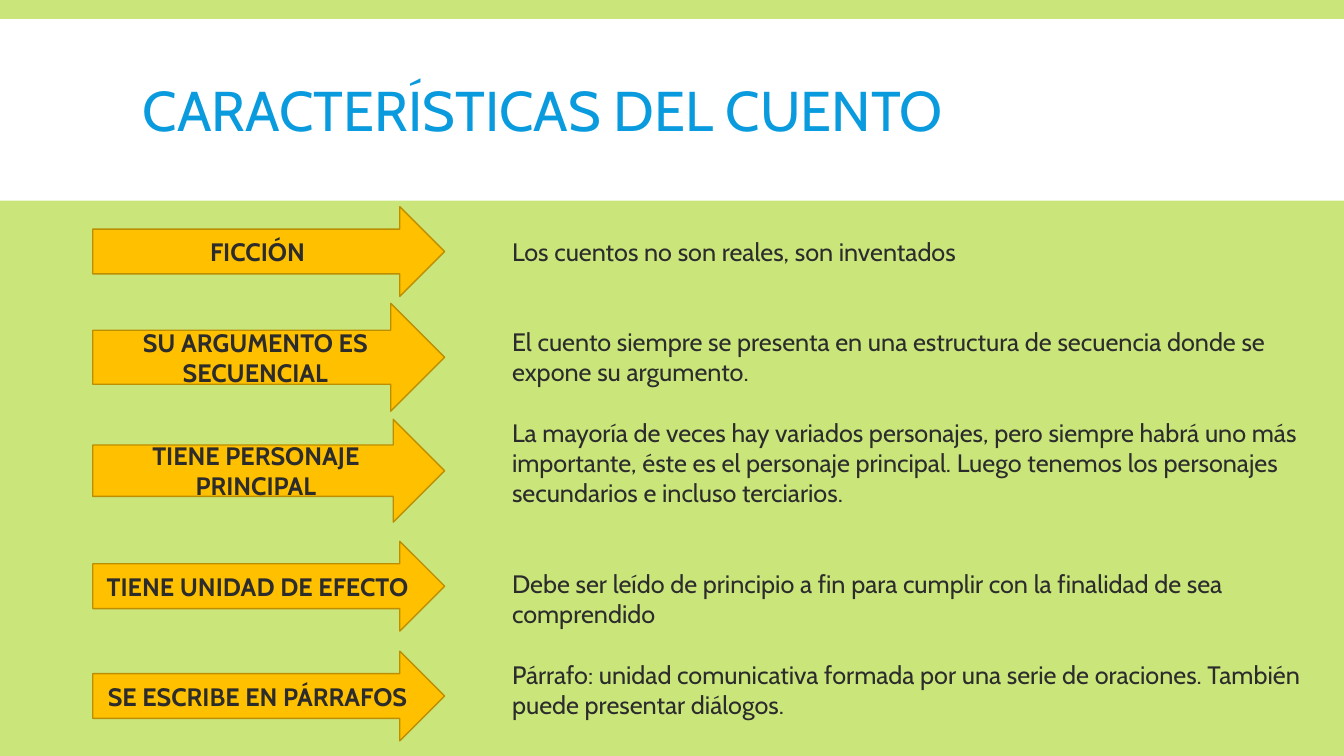
from pptx import Presentation
from pptx.dml.color import RGBColor
from pptx.enum.shapes import MSO_SHAPE
from pptx.enum.text import MSO_ANCHOR, PP_ALIGN
from pptx.util import Inches, Pt

RECTANGLE = MSO_SHAPE.RECTANGLE
RIGHT_ARROW = MSO_SHAPE.RIGHT_ARROW
MIDDLE = MSO_ANCHOR.MIDDLE
TOP = MSO_ANCHOR.TOP
LEFT = PP_ALIGN.LEFT
CENTER = PP_ALIGN.CENTER

FONT = "Cabin"
GREEN = "CAE67B"
WHITE = "FFFFFF"
BLUE = "099BDD"
AMBER = "FFC000"
DARK_AMBER = "BD8E00"
INK = "2C2C2C"
LINE_PITCH = 21.6

TRAITS = [
    ("FICCIÓN", 2.05, 0.89, 0,
     "Los cuentos no son reales, son inventados"),
    ("SU ARGUMENTO ES SECUENCIAL", 3.01, 1.07, 2,
     "El cuento siempre se presenta en una estructura de secuencia donde se "
     "expone su argumento."),
    ("TIENE PERSONAJE PRINCIPAL", 4.16, 1.02, 1,
     "La mayoría de veces hay variados personajes, pero siempre habrá uno más "
     "importante, éste es el personaje principal. Luego tenemos los personajes "
     "secundarios e incluso terciarios."),
    ("TIENE UNIDAD DE EFECTO", 5.37, 0.89, 2,
     "Debe ser leído de principio a fin para cumplir con la finalidad de sea "
     "comprendido"),
    ("SE ESCRIBE EN PÁRRAFOS", 6.46, 0.89, 1,
     "Párrafo: unidad comunicativa formada por una serie de oraciones. También "
     "puede presentar diálogos."),
]


def color(value):
    return RGBColor.from_string(value)


def write(para, text, size=18, fill=INK, bold=False, align=LEFT,
          space_before=0, line_spacing=1.0):
    para.alignment = align
    para.space_before = Pt(space_before)
    para.line_spacing = line_spacing
    span = para.add_run()
    span.text = text
    span.font.name = FONT
    span.font.size = Pt(size)
    span.font.bold = bold
    span.font.color.rgb = color(fill)


def add_panel(page, kind, left, top, width, height, fill, line=None):
    panel = page.shapes.add_shape(
        kind, Inches(left), Inches(top), Inches(width), Inches(height))
    panel.shadow.inherit = False
    panel.fill.solid()
    panel.fill.fore_color.rgb = color(fill)
    if line:
        panel.line.color.rgb = color(line)
        panel.line.width = Pt(1)
    else:
        panel.line.fill.background()
    return panel


def add_text_frame(page, left, top, width, height, anchor=TOP):
    box = page.shapes.add_textbox(
        Inches(left), Inches(top), Inches(width), Inches(height))
    frame = box.text_frame
    frame.word_wrap = True
    frame.vertical_anchor = anchor
    return frame


def add_title(page, text):
    frame = add_text_frame(page, 1.32, 0.31, 10.7, 1.65, anchor=MIDDLE)
    write(frame.paragraphs[0], text, size=40, fill=BLUE, line_spacing=0.85)


def add_arrow(page, label, top, height):
    arrow = add_panel(page, RIGHT_ARROW, 0.92, top, 3.49, height,
                      AMBER, line=DARK_AMBER)
    frame = arrow.text_frame
    frame.word_wrap = True
    frame.vertical_anchor = MIDDLE
    write(frame.paragraphs[0], label, bold=True, align=CENTER)


def main():
    deck = Presentation()
    deck.slide_width = Inches(13.33)
    deck.slide_height = Inches(7.5)
    page = deck.slides.add_slide(deck.slide_layouts[6])
    page.background.fill.solid()
    page.background.fill.fore_color.rgb = color(GREEN)

    add_panel(page, RECTANGLE, 0, 0.19, 13.33, 1.8, WHITE)
    add_title(page, "CARACTERÍSTICAS DEL CUENTO")

    details = add_text_frame(page, 4.98, 2.29, 8.02, 4.95)
    for index, (label, top, height, gap_lines, detail) in enumerate(TRAITS):
        add_arrow(page, label, top, height)
        para = details.add_paragraph() if index else details.paragraphs[0]
        write(para, detail, space_before=gap_lines * LINE_PITCH)

    deck.save("out.pptx")


if __name__ == "__main__":
    main()
